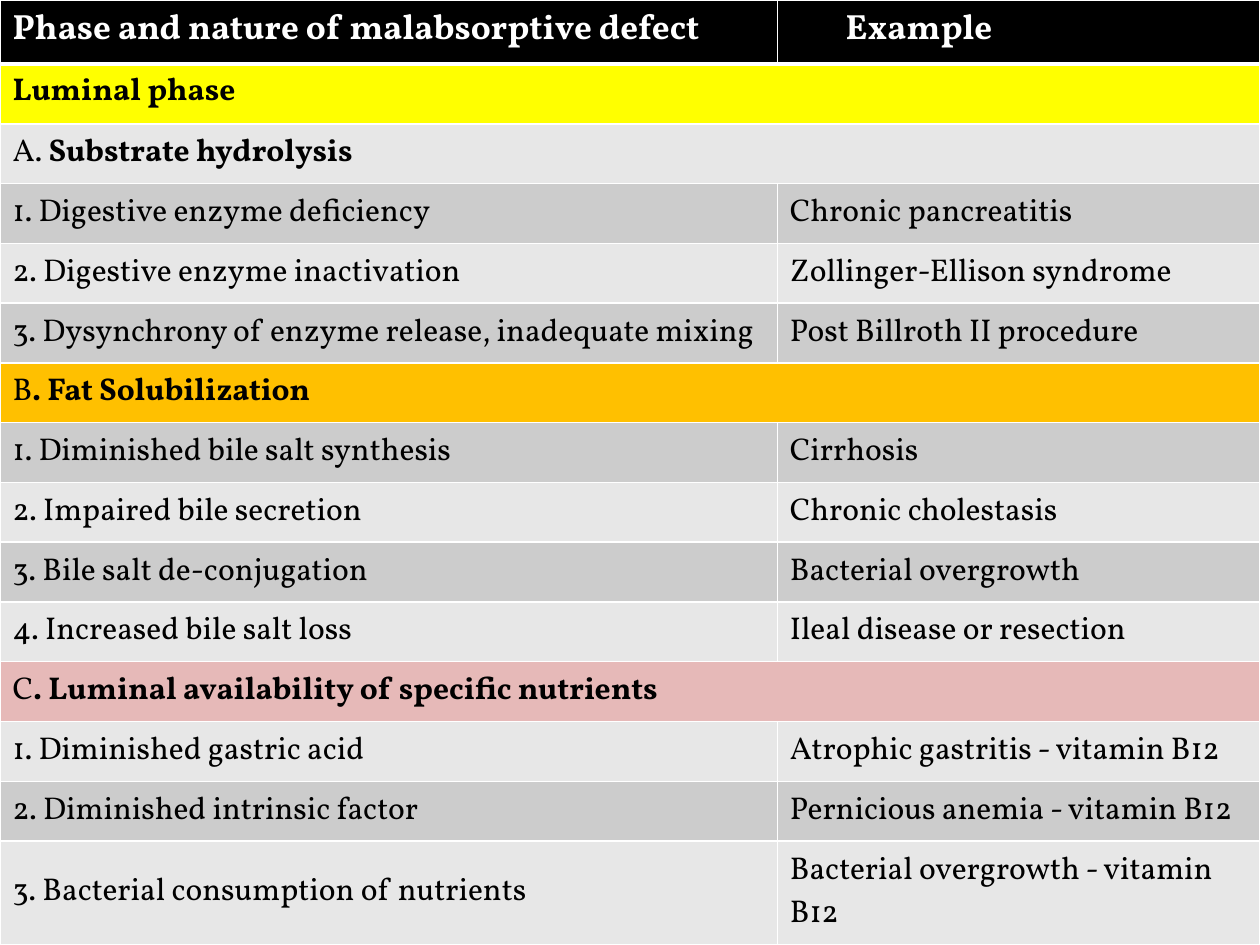
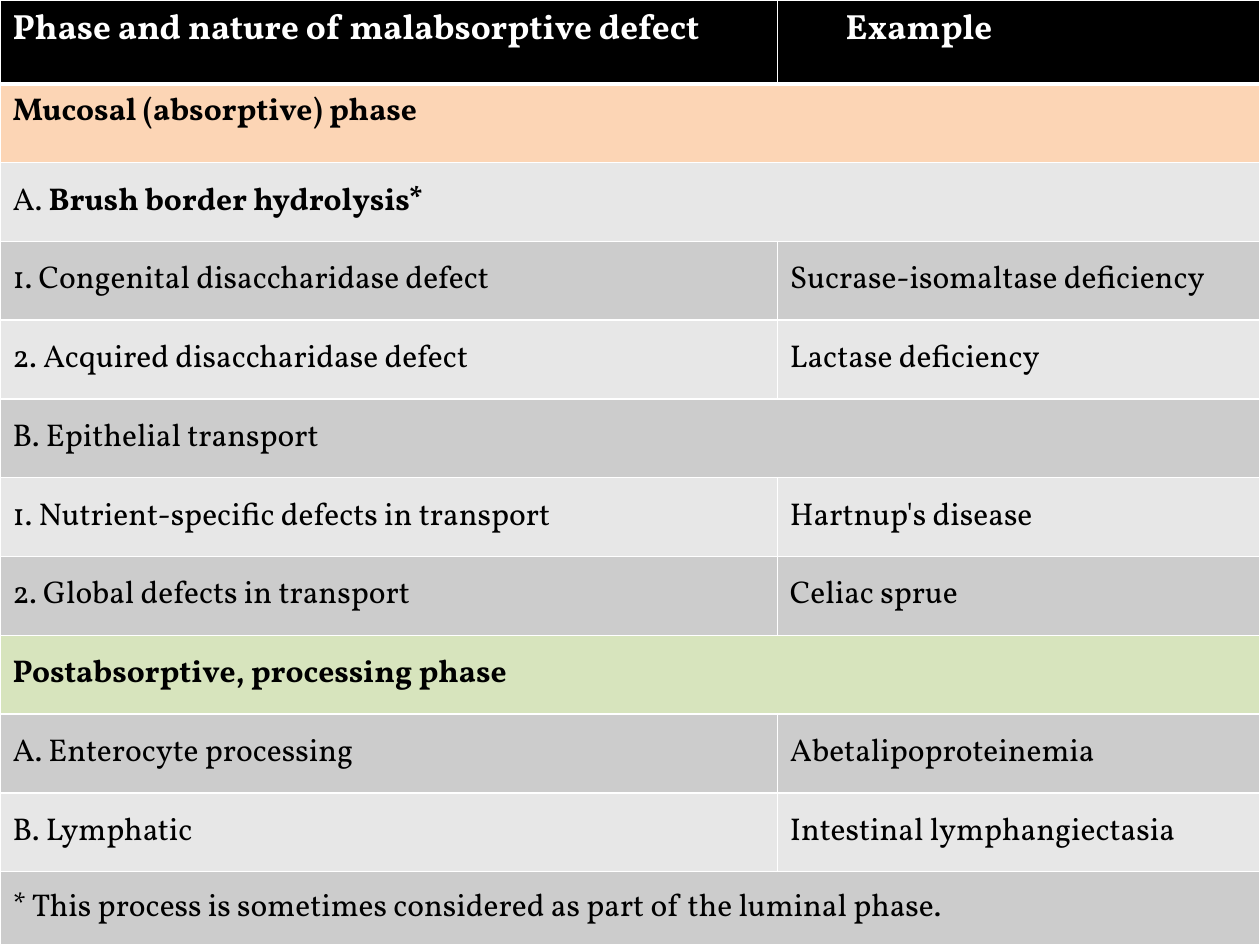
import pptx
import pptx.dml.color
import pptx.enum.text
import pptx.oxml
import pptx.oxml.ns
import pptx.util

Cm = pptx.util.Cm
Pt = pptx.util.Pt
Anchor = pptx.enum.text.MSO_ANCHOR

SLIDE_WIDTH, SLIDE_HEIGHT = 25.4, 19.05
DEFECT_WIDTH = 15.67
HEADINGS = ("Phase and nature of malabsorptive defect", "Example")

LUMINAL_ROWS = [
    ("", "Luminal phase", None, "FFFF00"),
    ("A. ", "Substrate hydrolysis", None, None),
    ("1. Digestive enzyme deficiency", "", "Chronic pancreatitis", None),
    ("2. Digestive enzyme inactivation", "", "Zollinger-Ellison syndrome", None),
    ("3. Dysynchrony of enzyme release, inadequate mixing", "", "Post Billroth II procedure", None),
    ("B", ". Fat Solubilization", None, "FFC000"),
    ("1. Diminished bile salt synthesis", "", "Cirrhosis", None),
    ("2. Impaired bile secretion", "", "Chronic cholestasis", None),
    ("3. Bile salt de-conjugation", "", "Bacterial overgrowth", None),
    ("4. Increased bile salt loss", "", "Ileal disease or resection", None),
    ("C", ". Luminal availability of specific nutrients", None, "E6B9B8"),
    ("1. Diminished gastric acid", "", "Atrophic gastritis - vitamin B12", None),
    ("2. Diminished intrinsic factor", "", "Pernicious anemia - vitamin B12", None),
    ("3. Bacterial consumption of nutrients", "", "Bacterial overgrowth - vitamin B12", None),
]

MUCOSAL_ROWS = [
    ("", "Mucosal (absorptive) phase", None, "FCD5B5"),
    ("A. ", "Brush border hydrolysis*", None, None),
    ("1. Congenital disaccharidase defect", "", "Sucrase-isomaltase deficiency", None),
    ("2. Acquired disaccharidase defect", "", "Lactase deficiency", None),
    ("B. Epithelial transport", "", None, None),
    ("1. Nutrient-specific defects in transport", "", "Hartnup's disease", None),
    ("2. Global defects in transport", "", "Celiac sprue", None),
    ("", "Postabsorptive, processing phase", None, "D7E4BD"),
    ("A. Enterocyte processing", "", "Abetalipoproteinemia", None),
    ("B. Lymphatic", "", "Intestinal lymphangiectasia", None),
    ("* This process is sometimes considered as part of the luminal phase.", "", None, None),
]


def color(value):
    return pptx.dml.color.RGBColor.from_string(value)


class DefectDeck:
    """Holds the table style and the current slide."""

    font_name = "Vollkorn"
    white, black = "FFFFFF", "000000"
    bands = ("E7E7E7", "CCCCCC")
    heading_size, body_size = 20, 18
    thin, thick = 1, 3

    def __init__(self):
        self.presentation = pptx.Presentation()
        self.presentation.slide_width = Cm(SLIDE_WIDTH)
        self.presentation.slide_height = Cm(SLIDE_HEIGHT)
        self.slide = None

    def add_slide(self):
        self.slide = self.presentation.slides.add_slide(self.presentation.slide_layouts[6])

    def set_text(self, cell, plain, bold, size, ink):
        paragraph = cell.text_frame.paragraphs[0]
        paragraph.text = plain or bold
        paragraph.runs[0].font.bold = not plain
        if plain and bold:
            run = paragraph.add_run()
            run.text = bold
            run.font.bold = True
        for run in paragraph.runs:
            run.font.name = self.font_name
            run.font.size = Pt(size)
            run.font.color.rgb = color(ink)

    def paint(self, cell, fill, top, bottom):
        cell.fill.solid()
        cell.fill.fore_color.rgb = color(fill)
        properties = cell._tc.get_or_add_tcPr()
        widths = {"L": self.thin, "R": self.thin, "T": top, "B": bottom}
        for position, (side, width) in enumerate(widths.items()):
            properties.insert(position, pptx.oxml.parse_xml(
                f'<a:ln{side} {pptx.oxml.ns.nsdecls("a")} w="{Pt(width)}"><a:solidFill>'
                f'<a:srgbClr val="{self.white}"/></a:solidFill></a:ln{side}>'))

    def add_headings(self, table):
        for cell, heading in zip(table.rows[0].cells, HEADINGS):
            self.set_text(cell, "", heading, self.heading_size, self.white)
            self.paint(cell, self.black, self.thin, self.thick)
        table.cell(0, 1).margin_left = Cm(1.38)

    def add_row(self, table, index, plain, bold, example, fill):
        defect_cell, example_cell = table.rows[index].cells
        for cell in (defect_cell, example_cell):
            self.paint(cell, fill or self.bands[index % 2],
                       self.thick if index == 1 else self.thin, self.thin)
            cell.vertical_anchor = Anchor.TOP if index == 1 else Anchor.MIDDLE
        self.set_text(defect_cell, plain, bold, self.body_size, self.black)
        if example is None:
            defect_cell.merge(example_cell)
        else:
            self.set_text(example_cell, example, "", self.body_size, self.black)

    def add_table(self, rows, heading_height, last_height):
        shape = self.slide.shapes.add_table(
            len(rows) + 1, 2, Cm(0), Cm(0), Cm(SLIDE_WIDTH), Cm(SLIDE_HEIGHT))
        table = shape.table
        table.columns[0].width = Cm(DEFECT_WIDTH)
        table.columns[1].width = Cm(SLIDE_WIDTH - DEFECT_WIDTH)
        middle_count = len(rows) - 1
        middle_height = (SLIDE_HEIGHT - heading_height - last_height) / middle_count
        heights = [heading_height] + [middle_height] * middle_count + [last_height]
        for table_row, height in zip(table.rows, heights):
            table_row.height = Cm(height)
        self.add_headings(table)
        for index, row in enumerate(rows, start=1):
            self.add_row(table, index, *row)


def main():
    deck = DefectDeck()
    for rows, heading_height, last_height in (
        (LUMINAL_ROWS, 1.29, 2.09),
        (MUCOSAL_ROWS, 1.69, 1.48),
    ):
        deck.add_slide()
        deck.add_table(rows, heading_height, last_height)
    deck.presentation.save("out.pptx")


if __name__ == "__main__":
    main()
